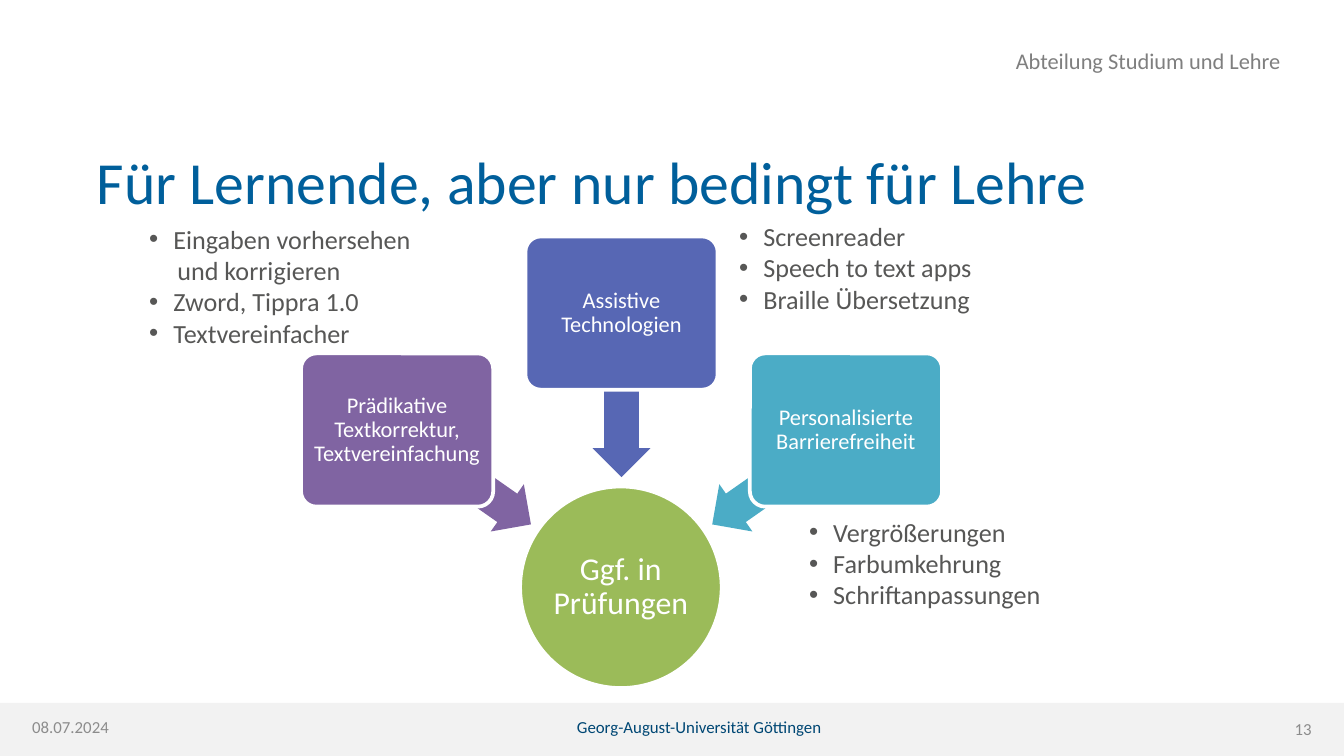
from dataclasses import dataclass

from lxml import etree
from pptx import Presentation
from pptx.dml.color import RGBColor
from pptx.enum.shapes import MSO_SHAPE
from pptx.enum.text import MSO_ANCHOR, MSO_AUTO_SIZE, PP_ALIGN
from pptx.oxml.ns import qn
from pptx.util import Inches, Pt

RECT, ROUND = MSO_SHAPE.RECTANGLE, MSO_SHAPE.ROUNDED_RECTANGLE
OVAL, ARROW = MSO_SHAPE.OVAL, MSO_SHAPE.LEFT_ARROW
TOP, MIDDLE = MSO_ANCHOR.TOP, MSO_ANCHOR.MIDDLE
LEFT, CENTER, RIGHT = PP_ALIGN.LEFT, PP_ALIGN.CENTER, PP_ALIGN.RIGHT
NO_FIT = MSO_AUTO_SIZE.NONE


@dataclass(frozen=True)
class Theme:
    font: str = "Calibri"
    white: str = "FFFFFF"
    band: str = "F2F2F2"
    title: str = "005F9B"
    foot: str = "004774"
    muted: str = "8C8C8C"
    head: str = "7F7F7F"
    body: str = "575756"
    green: str = "9BBB59"
    violet: str = "8064A2"
    blue: str = "5767B4"
    teal: str = "4BACC6"
    title_size: int = 32
    hub_size: int = 17
    list_size: int = 14
    label_size: int = 12
    foot_size: int = 9


THEME = Theme()
WIDE = 10
HIGH = WIDE * 9 / 16
MID = 4.62


def rgb(code):
    return RGBColor.from_string(code)


def style(para, size, color, align=LEFT):
    para.alignment = align
    for run in para.runs:
        run.font.name = THEME.font
        run.font.size = Pt(size)
        run.font.color.rgb = rgb(color)


def set_frame(frame, inset=0, anchor=TOP):
    frame.word_wrap = True
    frame.auto_size = NO_FIT
    frame.vertical_anchor = anchor
    frame.margin_left = frame.margin_right = Inches(inset)
    frame.margin_top = frame.margin_bottom = Inches(inset)


def add_title(slide, text):
    title = slide.shapes.title
    title.left, title.top = Inches(0.72), Inches(1.08)
    title.width, title.height = Inches(8.34), Inches(0.47)
    set_frame(title.text_frame)
    title.text_frame.text = text
    para = title.text_frame.paragraphs[0]
    style(para, THEME.title_size, THEME.title)
    para.line_spacing = 1.0


def add_box(slide, area):
    box = slide.shapes.add_textbox(*map(Inches, area))
    set_frame(box.text_frame)
    return box.text_frame


def add_note(slide, area, text, size, color, align=LEFT):
    frame = add_box(slide, area)
    frame.text = text
    style(frame.paragraphs[0], size, color, align)


def add_list(slide, area, items):
    frame = add_box(slide, area)
    frame.text = "\n".join(text for text, _ in items)
    for para, (_, marked) in zip(frame.paragraphs, items):
        props = para._p.get_or_add_pPr()
        props.set("marL", str(Inches(0.38 if marked else 0.41)))
        props.set("indent", str(Inches(-0.18 if marked else 0)))
        if marked:
            font = etree.SubElement(props, qn("a:buFont"))
            font.set("typeface", "Arial")
            mark = etree.SubElement(props, qn("a:buChar"))
            mark.set("char", "•")
        else:
            etree.SubElement(props, qn("a:buNone"))
        style(para, THEME.list_size, THEME.body)


def add_form(slide, kind, area, color, edge=False):
    form = slide.shapes.add_shape(kind, *map(Inches, area))
    form.shadow.inherit = False
    form.fill.solid()
    form.fill.fore_color.rgb = rgb(color)
    if edge:
        form.line.color.rgb = rgb(THEME.white)
        form.line.width = Pt(2)
    else:
        form.line.fill.background()
    return form


def add_label(form, text, size, inset):
    frame = form.text_frame
    set_frame(frame, inset, MIDDLE)
    frame.text = text
    para = frame.paragraphs[0]
    style(para, size, THEME.white, CENTER)
    para.line_spacing = 0.9


def add_hub(slide, text):
    hub = add_form(slide, OVAL, (MID - 0.75, 3.62, 1.5, 1.5), THEME.green, True)
    add_label(hub, text, THEME.hub_size, 0.01)


def add_spoke(slide, side, text, color):
    drop = abs(side)
    area = (MID + 1.17 * side - 0.6, 2.73 + 0.61 * drop, 1.21, 0.43)
    arrow = add_form(slide, ARROW, area, color)
    arrow.adjustments[0], arrow.adjustments[1] = 0.6, 0.5
    arrow.rotation = 270 + 55 * side

    area = (MID + 1.67 * side - 0.71, 1.76 + 0.87 * drop, 1.43, 1.14)
    box = add_form(slide, ROUND, area, color, True)
    box.adjustments[0] = 0.1
    add_label(box, text, THEME.label_size, 0.03)


def main():
    deck = Presentation()
    deck.slide_width, deck.slide_height = Inches(WIDE), Inches(HIGH)
    slide = deck.slides.add_slide(deck.slide_layouts[5])

    add_form(slide, RECT, (0, 5.23, WIDE, HIGH - 5.23), THEME.band)
    add_title(slide, "Für Lernende, aber nur bedingt für Lehre")
    size = THEME.foot_size
    add_note(slide, (1.89, 5.33, 6.62, 0.16),
             "Georg-August-Universität Göttingen", size, THEME.foot, CENTER)
    add_note(slide, (0.24, 5.33, 1.13, 0.16), "08.07.2024", size, THEME.muted)
    add_note(slide, (9.1, 5.35, 0.66, 0.14), "13", size, THEME.muted, RIGHT)
    add_note(slide, (6.62, 0.35, 2.91, 0.2), "Abteilung Studium und Lehre",
             THEME.label_size, THEME.head, RIGHT)

    add_hub(slide, "Ggf. in Prüfungen")
    spokes = [
        (-1, "Prädikative Textkorrektur, Textvereinfachung", THEME.violet),
        (0, "Assistive Technologien", THEME.blue),
        (1, "Personalisierte Barrierefreiheit", THEME.teal),
    ]
    for side, text, color in spokes:
        add_spoke(slide, side, text, color)

    lists = [
        ((0.91, 1.66, 2.22, 0.94),
         [("Eingaben vorhersehen", True), ("und korrigieren", False),
          ("Zword, Tippra 1.0", True), ("Textvereinfacher", True)]),
        ((5.3, 1.64, 2.93, 0.77),
         [("Screenreader", True), ("Speech to text apps", True),
          ("Braille Übersetzung", True)]),
        ((5.82, 3.84, 2.13, 0.71),
         [("Vergrößerungen", True), ("Farbumkehrung", True),
          ("Schriftanpassungen", True)]),
    ]
    for area, items in lists:
        add_list(slide, area, items)

    deck.save("out.pptx")


if __name__ == "__main__":
    main()
